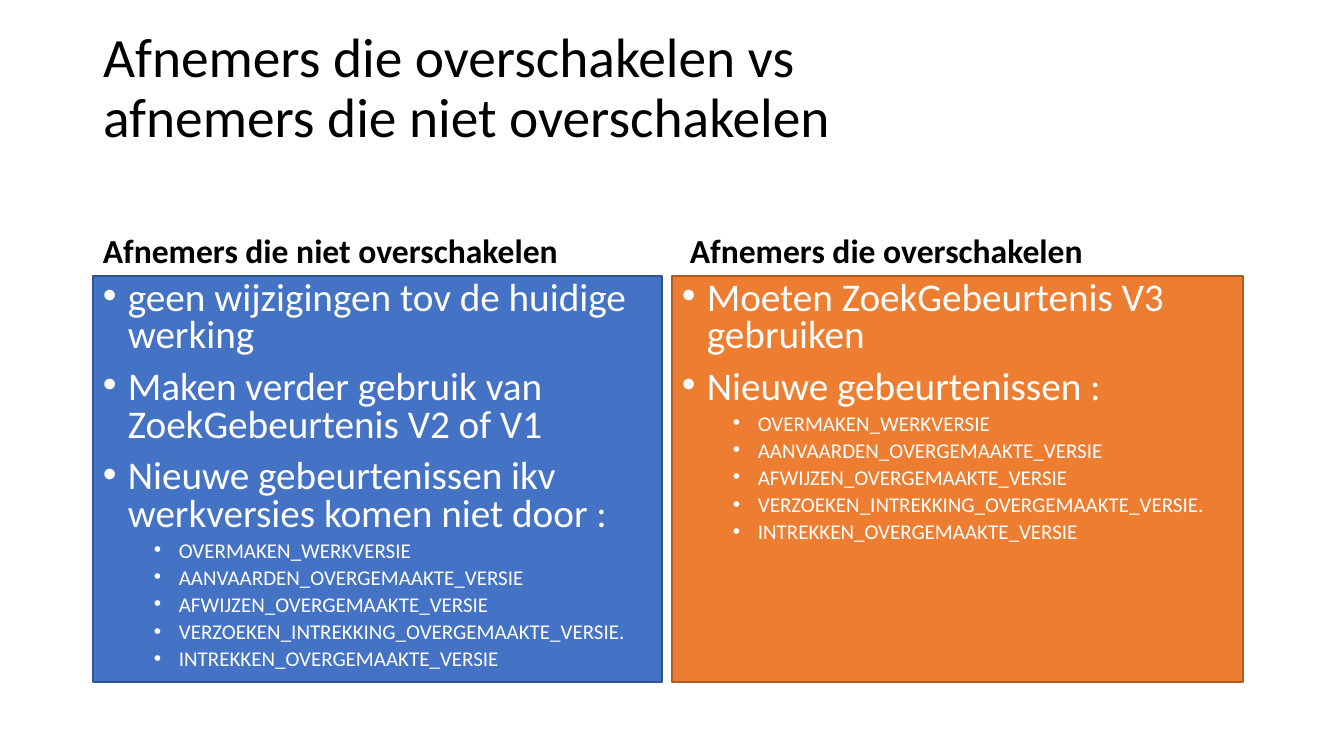
import pptx
import pptx.util
import pptx.dml.color
import pptx.enum.shapes
import pptx.enum.text
import pptx.oxml.ns
from dataclasses import dataclass
from lxml import etree

ANCHOR = pptx.enum.text.MSO_ANCHOR


@dataclass(frozen=True)
class Theme:
    font: str = "Calibri"
    dark: str = "000000"
    light: str = "FFFFFF"
    blue: str = "4472C4"
    blue_line: str = "325491"
    orange: str = "ED7D31"
    orange_line: str = "AF5C24"
    title: float = 39.6
    heading: float = 24
    point: float = 28
    event: float = 15


def px(n):
    """100.8 px to the inch."""
    return pptx.util.Emu(round(n * 914400 / 100.8))


def rgb(color):
    return pptx.dml.color.RGBColor.from_string(color)


class Deck:
    def __init__(self, theme):
        self.theme = theme
        self.prs = pptx.Presentation()
        self.prs.slide_width, self.prs.slide_height = px(1344), px(756)
        self.slide = self.prs.slides.add_slide(self.prs.slide_layouts[5])

    def frame(self, tf, anchor):
        tf.word_wrap = True
        tf.auto_size = pptx.enum.text.MSO_AUTO_SIZE.NONE
        tf.vertical_anchor = anchor

    def style(self, p, size, color, bold=False, spacing=0.9, before=0):
        p.alignment = pptx.enum.text.PP_ALIGN.LEFT
        p.line_spacing = spacing
        p.space_before = pptx.util.Pt(before)
        p.font.name, p.font.bold = self.theme.font, bold
        p.font.size = pptx.util.Pt(size)
        p.font.color.rgb = rgb(color)

    def bullet(self, p, indent):
        pPr = p._p.get_or_add_pPr()
        pPr.set("marL", str(px(indent)))
        pPr.set("indent", str(-px(25)))
        # Bullet marks go between the spacing and the run defaults
        defaults = pPr.find(pptx.oxml.ns.qn("a:defRPr"))
        for tag, key, value in (("a:buFont", "typeface", "Arial"),
                                ("a:buChar", "char", "•")):
            mark = etree.Element(pptx.oxml.ns.qn(tag))
            mark.set(key, value)
            defaults.addprevious(mark)

    def title(self, text, x, y, w, h, lift):
        sp = self.slide.shapes.title
        sp.left, sp.top, sp.width, sp.height = map(px, (x, y, w, h))
        tf = sp.text_frame
        self.frame(tf, ANCHOR.MIDDLE)
        tf.margin_bottom = px(lift)
        tf.text = text
        self.style(tf.paragraphs[0], self.theme.title, self.theme.dark)

    def heading(self, text, x, y, w, h):
        tf = self.slide.shapes.add_textbox(*map(px, (x, y, w, h))).text_frame
        self.frame(tf, ANCHOR.BOTTOM)
        tf.text = text
        self.style(tf.paragraphs[0], self.theme.heading, self.theme.dark, bold=True)

    def panel(self, points, events, x, y, w, h, fill, line):
        sp = self.slide.shapes.add_shape(
            pptx.enum.shapes.MSO_SHAPE.RECTANGLE, *map(px, (x, y, w, h)))
        sp.shadow.inherit = False
        sp.fill.solid()
        sp.fill.fore_color.rgb = rgb(fill)
        sp.line.color.rgb = rgb(line)
        sp.line.width = pptx.util.Pt(1)
        tf = sp.text_frame
        self.frame(tf, ANCHOR.TOP)
        tf.text = "\n".join(points + events)
        for i, p in enumerate(tf.paragraphs):
            is_event = i >= len(points)
            p.level = int(is_event)
            size = self.theme.event if is_event else self.theme.point
            self.style(p, size, self.theme.light, spacing=0.8,
                       before=5 if is_event else 10)
            self.bullet(p, 76 if is_event else 25)


EVENTS = [
    "OVERMAKEN_WERKVERSIE",
    "AANVAARDEN_OVERGEMAAKTE_VERSIE",
    "AFWIJZEN_OVERGEMAAKTE_VERSIE",
    "VERZOEKEN_INTREKKING_OVERGEMAAKTE_VERSIE.",
    "INTREKKEN_OVERGEMAAKTE_VERSIE",
]
STAYING = [
    "geen wijzigingen tov de huidige werking",
    "Maken verder gebruik van ZoekGebeurtenis V2 of V1",
    "Nieuwe gebeurtenissen ikv werkversies komen niet door :",
]
SWITCHING = [
    "Moeten ZoekGebeurtenis V3 gebruiken",
    "Nieuwe gebeurtenissen :",
]


def main():
    theme = Theme()
    deck = Deck(theme)

    # Title
    deck.title("Afnemers die overschakelen vs\vafnemers die niet overschakelen",
               93, 74, 1159, 91, lift=65)

    # Left column: customers that stay
    deck.heading("Afnemers die niet overschakelen", 93, 185, 569, 91)
    deck.panel(STAYING, EVENTS, 93, 276, 569, 406, theme.blue, theme.blue_line)

    # Right column: customers that switch
    deck.heading("Afnemers die overschakelen", 680, 185, 571, 91)
    deck.panel(SWITCHING, EVENTS, 672, 276, 571, 406, theme.orange, theme.orange_line)

    deck.prs.save("out.pptx")


if __name__ == "__main__":
    main()
